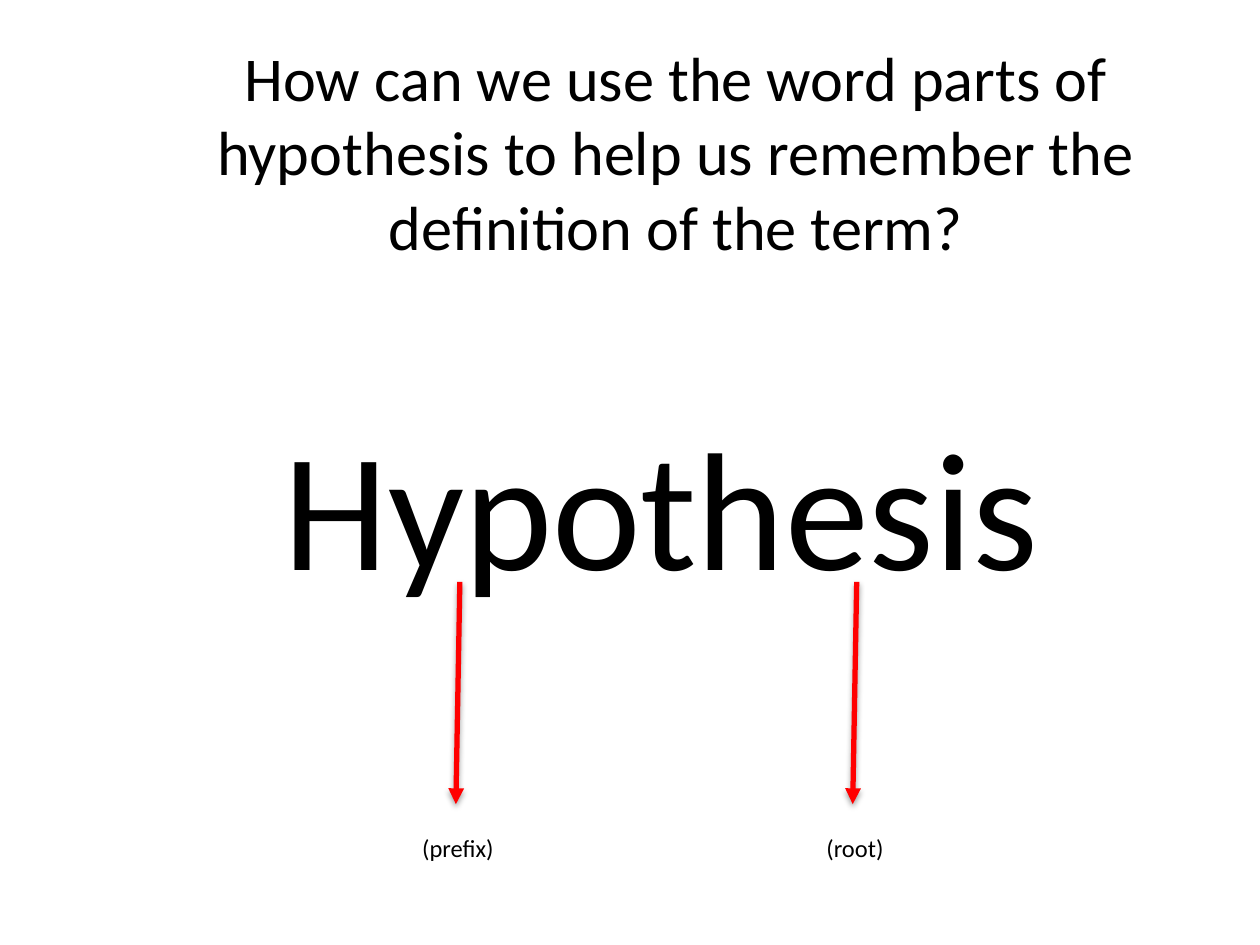
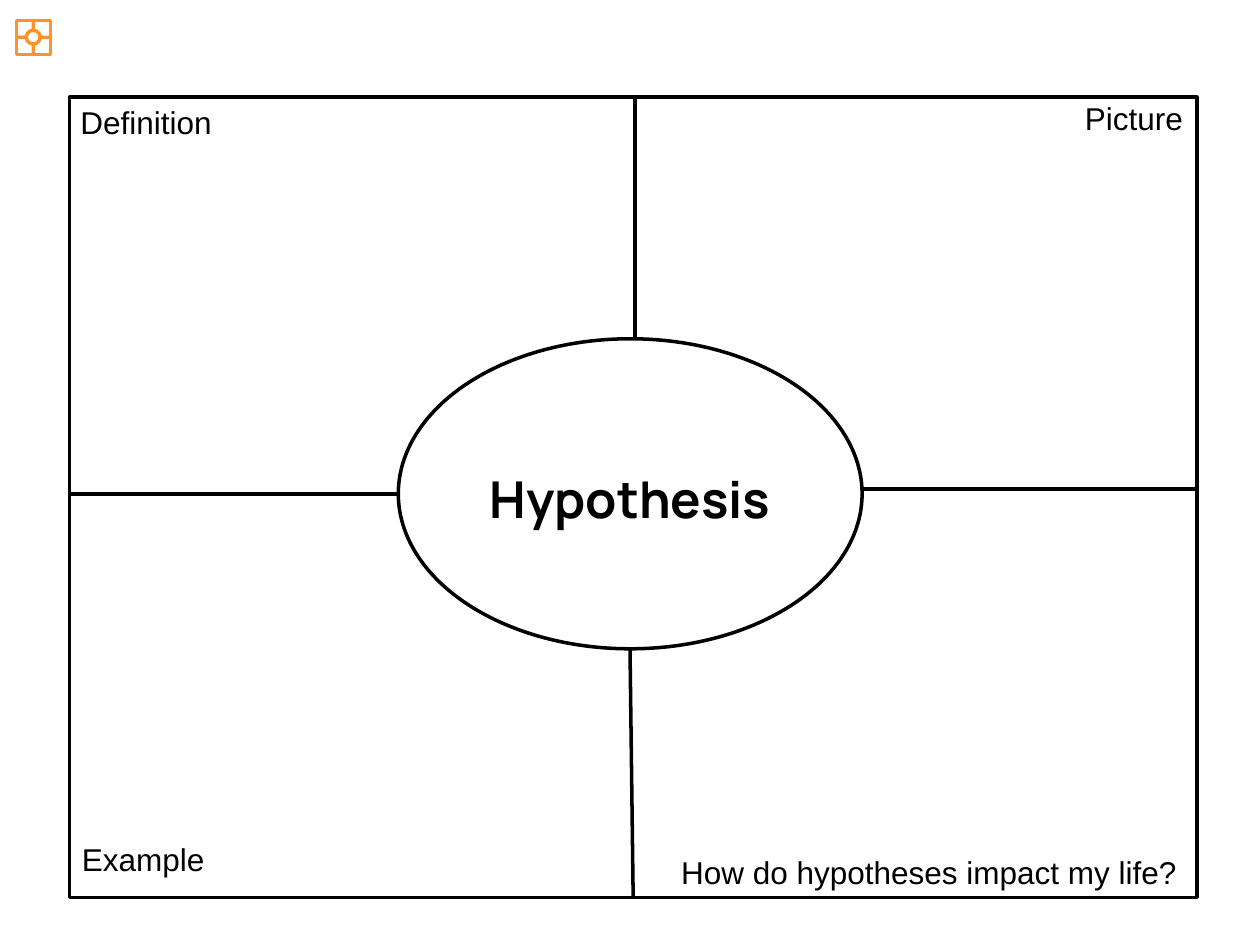
from dataclasses import dataclass
from typing import Optional

import lxml.etree
import pptx
import pptx.dml.color
import pptx.enum.dml
import pptx.enum.shapes
import pptx.enum.text
import pptx.oxml
import pptx.oxml.ns
import pptx.shapes.autoshape
import pptx.shapes.connector
import pptx.slide
import pptx.util

Cm = pptx.util.Cm
Pt = pptx.util.Pt
Shapes = pptx.enum.shapes.MSO_SHAPE
Align = pptx.enum.text.PP_ALIGN
Anchor = pptx.enum.text.MSO_ANCHOR

BLACK, WHITE, RED, ORANGE = "000000", "FFFFFF", "FF0000", "FF932B"
TOP, LEFT, BOTTOM, RIGHT = range(4)
OUTLINE_POINTS = 2
DRAWING_NS = pptx.oxml.ns.nsdecls("a")
ARROWHEAD = f'<a:tailEnd {DRAWING_NS} type="triangle"/>'
SOFT_SHADOW = (
    f'<a:effectLst {DRAWING_NS}>'
    '<a:outerShdw blurRad="40000" dist="20000" dir="5400000" rotWithShape="0">'
    '<a:srgbClr val="000000"><a:alpha val="37000"/></a:srgbClr>'
    "</a:outerShdw></a:effectLst>"
)
NO_EFFECTS = f"<a:effectLst {DRAWING_NS}/>"


@dataclass(frozen=True)
class Box:
    left: float
    top: float
    width: float
    height: float

    def lengths(self) -> tuple[int, int, int, int]:
        return Cm(self.left), Cm(self.top), Cm(self.width), Cm(self.height)


@dataclass(frozen=True)
class Label:
    text: str
    box: Box
    size: float
    font: str
    align: Align = Align.LEFT
    anchor: Anchor = Anchor.TOP
    bold: bool = False
    outline: Optional[str] = None


@dataclass(frozen=True)
class Spoke:
    start: tuple[float, float]
    end: tuple[float, float]
    joined_side: Optional[int] = None


@dataclass(frozen=True)
class Organizer:
    frame: Box
    centre: Box
    spokes: tuple[Spoke, ...]
    colour: str


@dataclass(frozen=True)
class WordPart:
    name: str
    arrow_x: float
    label_left: float


def rgb(value: str) -> pptx.dml.color.RGBColor:
    return pptx.dml.color.RGBColor.from_string(value)


def add_label(slide: pptx.slide.Slide, label: Label) -> None:
    textbox = slide.shapes.add_textbox(*label.box.lengths())
    if label.outline:
        textbox.line.color.rgb = rgb(label.outline)
        textbox.line.width = Pt(0.75)
    frame = textbox.text_frame
    frame.word_wrap = True
    frame.vertical_anchor = label.anchor
    paragraph = frame.paragraphs[0]
    paragraph.text = label.text
    paragraph.alignment = label.align
    paragraph.font.name = label.font
    paragraph.font.size = Pt(label.size)
    paragraph.font.bold = label.bold
    paragraph.font.color.rgb = rgb(BLACK)


def add_outline(
    slide: pptx.slide.Slide, kind: Shapes, box: Box, colour: str, fill: Optional[str] = None
) -> pptx.shapes.autoshape.Shape:
    outline = slide.shapes.add_shape(kind, *box.lengths())
    outline.shadow.inherit = False
    if fill:
        outline.fill.solid()
        outline.fill.fore_color.rgb = rgb(fill)
    else:
        outline.fill.background()
    outline.line.color.rgb = rgb(colour)
    outline.line.width = Pt(OUTLINE_POINTS)
    return outline


def add_line(
    slide: pptx.slide.Slide, spoke: Spoke, colour: str, width: float, effects: str = NO_EFFECTS
) -> pptx.shapes.connector.Connector:
    line = slide.shapes.add_connector(
        pptx.enum.shapes.MSO_CONNECTOR.STRAIGHT,
        *(Cm(value) for value in spoke.start + spoke.end),
    )
    line.line.color.rgb = rgb(colour)
    line.line.width = Pt(width)
    line._element.spPr.append(pptx.oxml.parse_xml(effects))
    return line


def add_organizer(slide: pptx.slide.Slide, organizer: Organizer) -> None:
    frame = add_outline(slide, Shapes.RECTANGLE, organizer.frame, organizer.colour)
    for spoke in organizer.spokes:
        line = add_line(slide, spoke, organizer.colour, OUTLINE_POINTS)
        if spoke.joined_side is not None:
            line.begin_connect(frame, spoke.joined_side)
    add_outline(slide, Shapes.OVAL, organizer.centre, organizer.colour, WHITE)


def add_word_part(slide: pptx.slide.Slide, part: WordPart) -> None:
    arrow = Spoke((part.arrow_x, 11.73), (part.arrow_x - 0.08, 16.21))
    line = add_line(slide, arrow, RED, 3, SOFT_SHADOW)
    line.line._get_or_add_ln().append(pptx.oxml.parse_xml(ARROWHEAD))
    box = Box(part.label_left, 16.66, 2.03, 0.86)
    add_label(slide, Label(part.name, box, 14, "Calibri", outline=WHITE))


QUESTION = Label(
    "How can we use the word parts of hypothesis to help us remember the definition of the term?",
    Box(3, 0.91, 21.26, 4.27), 35.6, "Calibri", Align.CENTER, Anchor.MIDDLE,
)
TERM = Label(
    "Hypothesis", Box(1.9, 8.15, 22.86, 3.99), 96, "Calibri", Align.CENTER, Anchor.MIDDLE
)
WORD_PARTS = (WordPart("(prefix)", 9.27, 8.26), WordPart("(root)", 17.27, 16.41))

WORD_MAP = Organizer(
    Box(1.4, 1.96, 22.73, 16.13),
    Box(8.03, 6.83, 9.35, 6.25),
    (
        Spoke((12.8, 1.96), (12.8, 6.83)),
        Spoke((12.76, 18.09), (12.7, 13.08), BOTTOM),
        Spoke((1.4, 9.96), (8.03, 9.96)),
        Spoke((24.13, 9.86), (17.37, 9.86)),
    ),
    BLACK,
)
MAP_ICON = Organizer(
    Box(0.33, 0.41, 0.69, 0.69),
    Box(0.53, 0.61, 0.28, 0.28),
    (
        Spoke((0.67, 0.41), (0.67, 0.61), TOP),
        Spoke((0.67, 1.1), (0.67, 0.89), BOTTOM),
        Spoke((0.33, 0.75), (0.53, 0.75), LEFT),
        Spoke((1.02, 0.75), (0.81, 0.75), RIGHT),
    ),
    ORANGE,
)
MAP_LABELS = (
    Label("Hypothesis", Box(8.31, 9.3, 8.79, 1.5), 29, "Manrope", Align.CENTER, bold=True),
    Label("Definition", Box(1.37, 1.96, 3.3, 1.02), 18, "Arial"),
    Label("Example", Box(1.4, 16.81, 3.1, 1.02), 18, "Arial"),
    Label("Picture", Box(21.62, 1.88, 2.6, 1.02), 18, "Arial"),
    Label(
        "How do hypotheses impact my life?", Box(12.57, 17.07, 11.4, 1.02), 18, "Arial", Align.RIGHT
    ),
)


def main() -> None:
    presentation = pptx.Presentation()
    presentation.slide_width = Cm(25.4)
    presentation.slide_height = Cm(19.05)
    blank = presentation.slide_layouts[6]

    word_parts_slide = presentation.slides.add_slide(blank)
    for label in (QUESTION, TERM):
        add_label(word_parts_slide, label)
    for part in WORD_PARTS:
        add_word_part(word_parts_slide, part)

    word_map_slide = presentation.slides.add_slide(blank)
    add_organizer(word_map_slide, WORD_MAP)
    for label in MAP_LABELS:
        add_label(word_map_slide, label)
    add_organizer(word_map_slide, MAP_ICON)

    presentation.save("out.pptx")


if __name__ == "__main__":
    main()
